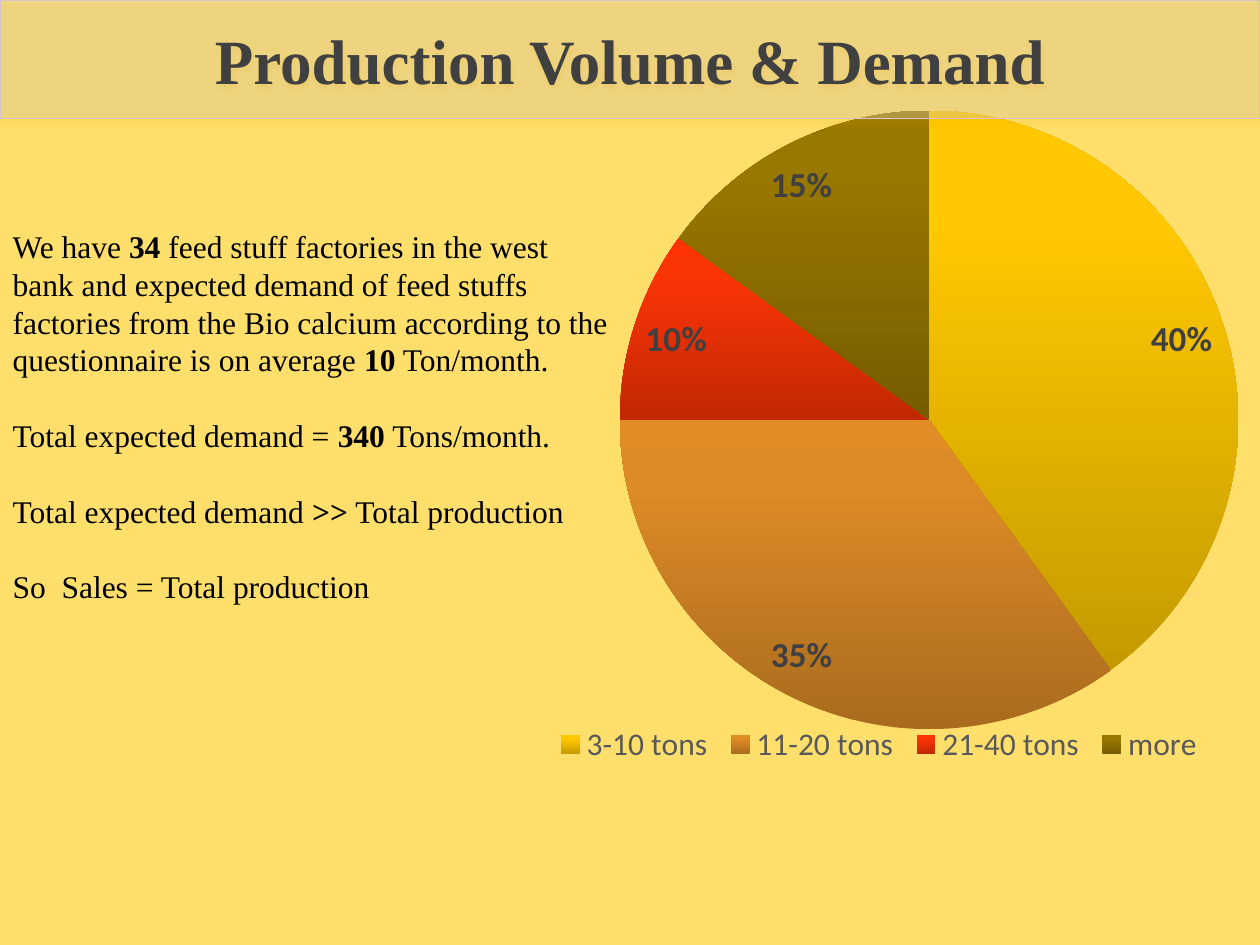
from dataclasses import dataclass

from pptx import Presentation, util as u
from pptx.chart.data import CategoryChartData
from pptx.dml.color import RGBColor
from pptx.enum import chart as ch, text as t
from pptx.oxml import parse_xml
from pptx.oxml.ns import nsdecls, qn

SERIF, SANS = "Times New Roman", "Calibri"
DARK = "404040"


@dataclass
class Slice:
    label: str
    share: float
    shades: tuple[str, str, str]  # bottom to top


SLICES = [
    Slice("3-10 tons", 0.4, ("C49A00", "FFC800", "FFC901")),
    Slice("11-20 tons", 0.35, ("AA6B1E", "DD8B27", "E18C24")),
    Slice("21-40 tons", 0.1, ("C12804", "FB3406", "FF3303")),
    Slice("more", 0.15, ("765C00", "997800", "9A7900")),
]

# Each statement alternates plain and bold pieces, starting with plain
STATEMENTS = [
    ("We have ", "34", " feed stuff factories in the west bank and expected demand "
     "of feed stuffs factories from the Bio calcium according to the questionnaire "
     "is on average ", "10", " Ton/month."),
    ("Total expected demand = ", "340", " Tons/month."),
    ("Total expected demand ", ">>", " Total production"),
    ("So  Sales = Total production",),
]


def color(hex_code: str) -> RGBColor:
    return RGBColor.from_string(hex_code)


def format_font(font, size: float, hex_code: str, bold=False, name=SERIF) -> None:
    font.size, font.bold, font.name = u.Pt(size), bold, name
    font.color.rgb = color(hex_code)


def write(paragraph, words: str, size=18, hex_code="000000", bold=False) -> None:
    run = paragraph.add_run()
    run.text = words
    format_font(run.font, size, hex_code, bold)


def place(shape, left: float, top: float, width: float, height: float) -> None:
    shape.left, shape.top = u.Cm(left), u.Cm(top)
    shape.width, shape.height = u.Cm(width), u.Cm(height)


def set_layout(element, x: float, y: float, w: float, h: float, inner=False) -> None:
    """Put a chart part at fractions of the chart area."""
    for old in element.findall(qn("c:layout")):
        element.remove(old)
    target = '<c:layoutTarget val="inner"/>' if inner else ""
    layout = parse_xml(
        f'<c:layout {nsdecls("c")}><c:manualLayout>{target}'
        '<c:xMode val="edge"/><c:yMode val="edge"/>'
        f'<c:x val="{x}"/><c:y val="{y}"/><c:w val="{w}"/><c:h val="{h}"/>'
        '</c:manualLayout></c:layout>')
    element.insert(0 if inner else 1, layout)


def shade_slice(point, shades: tuple[str, str, str]) -> None:
    fill = point.format.fill
    fill.gradient()
    fill.gradient_angle = 90
    stop_list = fill.gradient_stops[0]._gs.getparent()
    for stop in list(stop_list):
        stop_list.remove(stop)
    for position, shade in zip((0, 80, 100), shades):
        stop_list.append(parse_xml(
            f'<a:gs {nsdecls("a")} pos="{position * 1000}">'
            f'<a:srgbClr val="{shade}"/></a:gs>'))
    point.format.line.fill.background()


def add_pie(slide) -> None:
    volumes = CategoryChartData(number_format="0%")
    volumes.categories = [s.label for s in SLICES]
    volumes.add_series("Series 1", [s.share for s in SLICES])
    pie = slide.shapes.add_chart(ch.XL_CHART_TYPE.PIE, u.Cm(10.9), u.Cm(1.7),
                                 u.Cm(14.5), u.Cm(14.71), volumes).chart
    pie.has_title = False
    format_font(pie.font, 10, "000000", name=SANS)

    plot = pie.plots[0]
    plot.vary_by_categories = True
    for index, part in enumerate(SLICES):
        shade_slice(plot.series[0].points[index], part.shades)

    plot.has_data_labels = True
    labels = plot.data_labels
    labels.show_value, labels.show_percentage = True, False
    labels.number_format, labels.number_format_is_linked = "0%", False
    labels.position = ch.XL_LABEL_POSITION.BEST_FIT
    format_font(labels.font, 20, DARK, bold=True, name=SANS)

    pie.has_legend = True
    pie.legend.position = ch.XL_LEGEND_POSITION.BOTTOM
    pie.legend.include_in_layout = False
    format_font(pie.legend.font, 18, "595959", name=SANS)
    set_layout(pie.legend._element, 0.01, 0.87, 0.92, 0.07)
    plot_area = pie._chartSpace.chart.plotArea
    set_layout(plot_area, 0.11, 0.03, 0.86, 0.86, inner=True)


def fill_body(body) -> None:
    place(body, 0, 4.45, 12.7, 8.71)
    frame = body.text_frame
    frame.word_wrap, frame.auto_size = True, t.MSO_AUTO_SIZE.NONE
    for index, pieces in enumerate(STATEMENTS):
        statement = frame.add_paragraph() if index else frame.paragraphs[0]
        properties = statement._p.get_or_add_pPr()
        properties.set("marL", "0")
        properties.set("indent", "0")
        properties.append(parse_xml(f'<a:buNone {nsdecls("a")}/>'))
        statement.line_spacing = u.Pt(21.6)
        statement.space_before = u.Pt(21.6 if index else 0)
        for order, piece in enumerate(pieces):
            write(statement, piece, bold=order % 2 == 1)


def fill_title(title) -> None:
    place(title, 0, 0, 25.4, 2.39)
    title.fill.solid()
    title.fill.fore_color.rgb = color("D3CAC4")
    tint = title._element.spPr.find(f'{qn("a:solidFill")}/{qn("a:srgbClr")}')
    tint.append(parse_xml(f'<a:alpha {nsdecls("a")} val="33000"/>'))
    title.line.color.rgb = color("D7C3C3")
    title.line.width = u.Pt(0.75)
    title._element.spPr.append(parse_xml(
        f'<a:effectLst {nsdecls("a")}>'
        f'<a:outerShdw blurRad="{u.Pt(3.1)}" dist="{u.Pt(1.8)}" dir="5400000" '
        'rotWithShape="0"><a:srgbClr val="EEB000"><a:alpha val="35000"/>'
        '</a:srgbClr></a:outerShdw></a:effectLst>'))
    frame = title.text_frame
    frame.auto_size = t.MSO_AUTO_SIZE.NONE
    frame.vertical_anchor = t.MSO_ANCHOR.MIDDLE
    heading = frame.paragraphs[0]
    heading.alignment = t.PP_ALIGN.CENTER
    write(heading, "Production Volume & Demand", 36, DARK, bold=True)


def main() -> None:
    deck = Presentation()
    deck.slide_width, deck.slide_height = u.Cm(25.4), u.Cm(19.05)
    slide = deck.slides.add_slide(deck.slide_layouts[1])
    slide.background.fill.solid()
    slide.background.fill.fore_color.rgb = color("FFDF6B")

    fill_body(slide.placeholders[1])
    add_pie(slide)
    fill_title(slide.shapes.title)
    # The translucent title band lies over the top of the pie
    slide.shapes._spTree.append(slide.shapes.title._element)

    deck.save("out.pptx")


if __name__ == "__main__":
    main()
